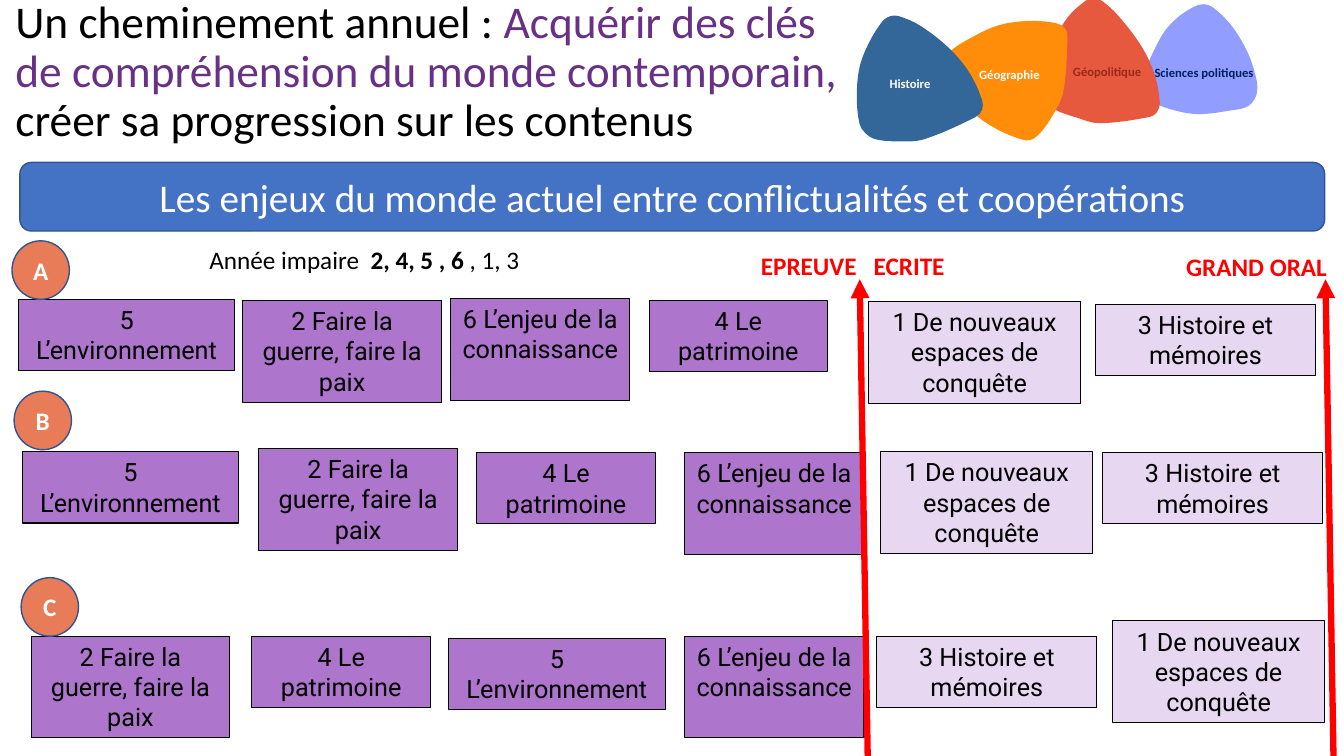
import lxml.etree
import pptx
import pptx.dml.color
import pptx.enum.shapes
import pptx.enum.text
import pptx.oxml.ns
import pptx.util

Pt = pptx.util.Pt
RGBColor = pptx.dml.color.RGBColor
Shape = pptx.enum.shapes.MSO_SHAPE
Align = pptx.enum.text.PP_ALIGN
Anchor = pptx.enum.text.MSO_ANCHOR
qn = pptx.oxml.ns.qn

BLACK = RGBColor(0x00, 0x00, 0x00)
WHITE = RGBColor(0xFF, 0xFF, 0xFF)
RED = RGBColor(0xFF, 0x00, 0x00)
TITLE_PURPLE = RGBColor(0x68, 0x30, 0x86)
THEME_PURPLE = RGBColor(0xAE, 0x75, 0xCD)
THEME_LILAC = RGBColor(0xE8, 0xD7, 0xF1)
BANNER_BLUE = RGBColor(0x44, 0x72, 0xC4)
OUTLINE_BLUE = RGBColor(0x32, 0x54, 0x91)
BADGE_ORANGE = RGBColor(0xE8, 0x7C, 0x58)
PETAL_LILAC = RGBColor(0x91, 0x9D, 0xFF)
PETAL_RED = RGBColor(0xE7, 0x59, 0x3F)
PETAL_ORANGE = RGBColor(0xFF, 0x8D, 0x09)
PETAL_BLUE = RGBColor(0x33, 0x66, 0x99)
NAVY = RGBColor(0x00, 0x20, 0x60)
BRICK = RGBColor(0x99, 0x29, 0x18)

THEMES = {
    1: ("1 De nouveaux espaces de conquête", 151.2, 72.7, THEME_LILAC),
    2: ("2 Faire la guerre, faire la paix", 141.8, 72.7, THEME_PURPLE),
    3: ("3 Histoire et mémoires", 157, 51, THEME_LILAC),
    4: ("4 Le patrimoine", 127.5, 51, THEME_PURPLE),
    5: ("5 L’environnement", 154.8, 51, THEME_PURPLE),
    6: ("6 L’enjeu de la connaissance", 128.2, 72.7, THEME_PURPLE),
}

LANES = [
    ("A", 8.6, 213.8, [(5, 4.4, 0), (2, 164.9, 0.8), (6, 313.2, -0.7),
                       (4, 455.1, 0.8), (1, 612, 1.5), (3, 774, 3.6)]),
    ("B", 10.1, 321.2, [(5, 5.7, 1.4), (2, 174.9, -0.8), (4, 330.5, 2.1),
                        (6, 478.8, 2.1), (1, 619.2, 1.4), (3, 777.6, 2.1)]),
    ("C", 15.1, 454.4, [(2, 7.2, 0), (4, 164.9, 0), (5, 305.3, 1.4),
                        (6, 473.8, 0), (3, 611.3, 0), (1, 779.8, -10.9)]),
]

PETALS = [
    ("Sciences politiques", 814, 3, PETAL_LILAC, NAVY, (6, 41.5, 80),
     [(84, 62.5), (78, 72.5), (64.5, 76), (41.5, 78.5), (22, 75), (4.5, 67.5),
      (0.5, 62.5), (0.5, 56), (15.5, 23), (26, 10.5), (38.5, 2),
      (45.5, 0), (52, 2), (65, 14.5), (75, 30), (81.5, 46)]),
    ("Géopolitique", 745, -1.5, PETAL_RED, BRICK, (10.5, 45, 70.5),
     [(30.5, 2), (36, 0), (42, 2), (54, 13), (70, 34), (79.5, 54), (83.5, 75),
      (81.5, 81.5), (76.5, 85), (40, 89.5), (24, 85.5), (8, 79.5),
      (2.5, 73.5), (0, 66.5), (2.5, 47.5), (9, 29), (18, 13.5)]),
    ("Géographie", 673, 15, PETAL_ORANGE, WHITE, (13, 30.5, 70),
     [(1, 35.5), (0, 29), (4, 23), (17, 14), (39, 3.5), (60.5, 0), (81, 1.5),
      (87.5, 5), (89.5, 11), (86.5, 50.5), (79.5, 66.5), (70, 80),
      (63, 85), (56.5, 84.5), (38.5, 77), (22, 65.5), (9.5, 51)]),
    ("Histoire", 612, 11, PETAL_BLUE, WHITE, (-4.5, 41, 85),
     [(18.5, 4), (24, 0.5), (30, 0.5), (45.5, 7.5), (66, 23.5), (80.5, 41),
      (89.5, 60.5), (89.5, 67.5), (85, 72.5), (48, 88.5), (31, 90),
      (13.5, 88.5), (6, 84), (2, 77.5), (0, 58), (2, 37), (8.5, 20)]),
]


def format_run(run, size, color, bold=False, font="Calibri"):
    run.font.name = font
    run.font.size = Pt(size)
    run.font.color.rgb = color
    run.font.bold = bold


def add_block(slide, kind, box, text, fill, outline, size, color, **style):
    shape = slide.shapes.add_shape(kind, *map(Pt, box))
    shape.shadow.inherit = False
    shape.fill.solid()
    shape.fill.fore_color.rgb = fill
    shape.line.color.rgb = outline[0]
    shape.line.width = Pt(outline[1])
    frame = shape.text_frame
    frame.word_wrap = True
    frame.text = text
    frame.paragraphs[0].alignment = Align.CENTER
    format_run(frame.paragraphs[0].runs[0], size, color, **style)
    return shape


def add_label(slide, box, pieces, size, color):
    frame = slide.shapes.add_textbox(*map(Pt, box)).text_frame
    frame.word_wrap = True
    for text, bold in pieces:
        run = frame.paragraphs[0].add_run()
        run.text = text
        format_run(run, size, color, bold)
    return frame


def round_outline(shape):
    segments = list(shape.element.iter(qn("a:lnTo")))
    ends = [complex(int(segment[0].get("x")), int(segment[0].get("y"))) for segment in segments]
    count = len(ends)
    tangents = []
    for index in range(count):
        direction = ends[(index + 1) % count] - ends[index - 1]
        tangents.append(direction / abs(direction))
    for index, segment in enumerate(segments):
        start, end = ends[index - 1], ends[index]
        reach = abs(end - start) / 3
        curve = lxml.etree.Element(qn("a:cubicBezTo"))
        for point in (start + tangents[index - 1] * reach, end - tangents[index] * reach, end):
            lxml.etree.SubElement(curve, qn("a:pt"), x=str(round(point.real)), y=str(round(point.imag)))
        segment.getparent().replace(segment, curve)


def add_petal(slide, name, left, top, fill, color, label, anchors):
    points = [(Pt(left + x), Pt(top + y)) for x, y in anchors]
    builder = slide.shapes.build_freeform(*points[0])
    builder.add_line_segments(points[1:] + points[:1], close=True)
    petal = builder.convert_to_shape()
    round_outline(petal)
    petal.shadow.inherit = False
    petal.fill.solid()
    petal.fill.fore_color.rgb = fill
    petal.line.fill.background()
    label_x, label_y, width = label
    frame = add_label(slide, (left + label_x, top + label_y, width, 15), [(name, True)], 9, color)
    frame.margin_left = frame.margin_right = frame.margin_top = frame.margin_bottom = Pt(2)
    frame.paragraphs[0].alignment = Align.CENTER


def add_title(slide, left, top, width, height):
    title = slide.shapes.title
    title.left, title.top, title.width, title.height = map(Pt, (left, top, width, height))
    frame = title.text_frame
    frame.auto_size = pptx.enum.text.MSO_AUTO_SIZE.NONE
    frame.vertical_anchor = Anchor.MIDDLE
    paragraph = frame.paragraphs[0]
    paragraph.alignment = Align.LEFT
    paragraph.line_spacing = 0.9
    for text, color, breaks in [
        ("Un cheminement annuel : ", BLACK, False),
        ("Acquérir des clés ", TITLE_PURPLE, True),
        ("de compréhension du monde contemporain,", TITLE_PURPLE, True),
        ("créer sa progression sur les contenus", BLACK, False),
    ]:
        run = paragraph.add_run()
        run.text = text
        format_run(run, 32.4, color)
        if breaks:
            paragraph.add_line_break()


def add_lane(slide, letter, left, top, entries):
    for number, x, y in entries:
        text, width, height, fill = THEMES[number]
        block = add_block(slide, Shape.RECTANGLE, (left + x, top + y, width, height),
                          text, fill, (BLACK, 0.75), 18, BLACK, font="Roboto")
        block.text_frame.vertical_anchor = Anchor.TOP
    badge = add_block(slide, Shape.OVAL, (left, top - 41.8, 41, 41.8), letter, BADGE_ORANGE,
                      (OUTLINE_BLUE, 1), 18, WHITE, bold=True)
    badge.text_frame.vertical_anchor = Anchor.MIDDLE


def add_exam(slide, text, label_left, label_top, arrow_left):
    add_label(slide, (label_left, label_top, 180, 29), [(text, True)], 18, RED)
    arrow = slide.shapes.add_connector(
        pptx.enum.shapes.MSO_CONNECTOR.STRAIGHT,
        Pt(arrow_left + 5.7), Pt(540), Pt(arrow_left), Pt(199.5))
    arrow.line.color.rgb = RED
    arrow.line.width = Pt(4.5)
    properties = arrow.element.find(qn("p:spPr"))
    lxml.etree.SubElement(properties.find(qn("a:ln")), qn("a:tailEnd"), type="triangle")
    lxml.etree.SubElement(properties, qn("a:effectLst"))


def main():
    presentation = pptx.Presentation()
    presentation.slide_width, presentation.slide_height = Pt(960), Pt(540)
    slide = presentation.slides.add_slide(presentation.slide_layouts[5])
    add_title(slide, 3.8, 0, 828, 104.5)
    for petal in PETALS:
        add_petal(slide, *petal)
    banner = add_block(slide, Shape.ROUNDED_RECTANGLE, (14.2, 116, 932, 49),
                       "Les enjeux du monde actuel entre conflictualités et coopérations",
                       BANNER_BLUE, (OUTLINE_BLUE, 1), 28, WHITE)
    banner.text_frame.vertical_anchor = Anchor.MIDDLE
    add_label(slide, (142.5, 171, 264, 29),
              [("Année impaire  ", False), ("2, 4, 5 , 6 ", True), (", 1, 3", False)], 18, BLACK)
    for lane in LANES:
        add_lane(slide, *lane)
    add_exam(slide, "EPREUVE   ECRITE", 536.4, 175, 614.1)
    add_exam(slide, "GRAND ORAL", 840.2, 176, 946.8)
    presentation.save("out.pptx")


if __name__ == "__main__":
    main()
